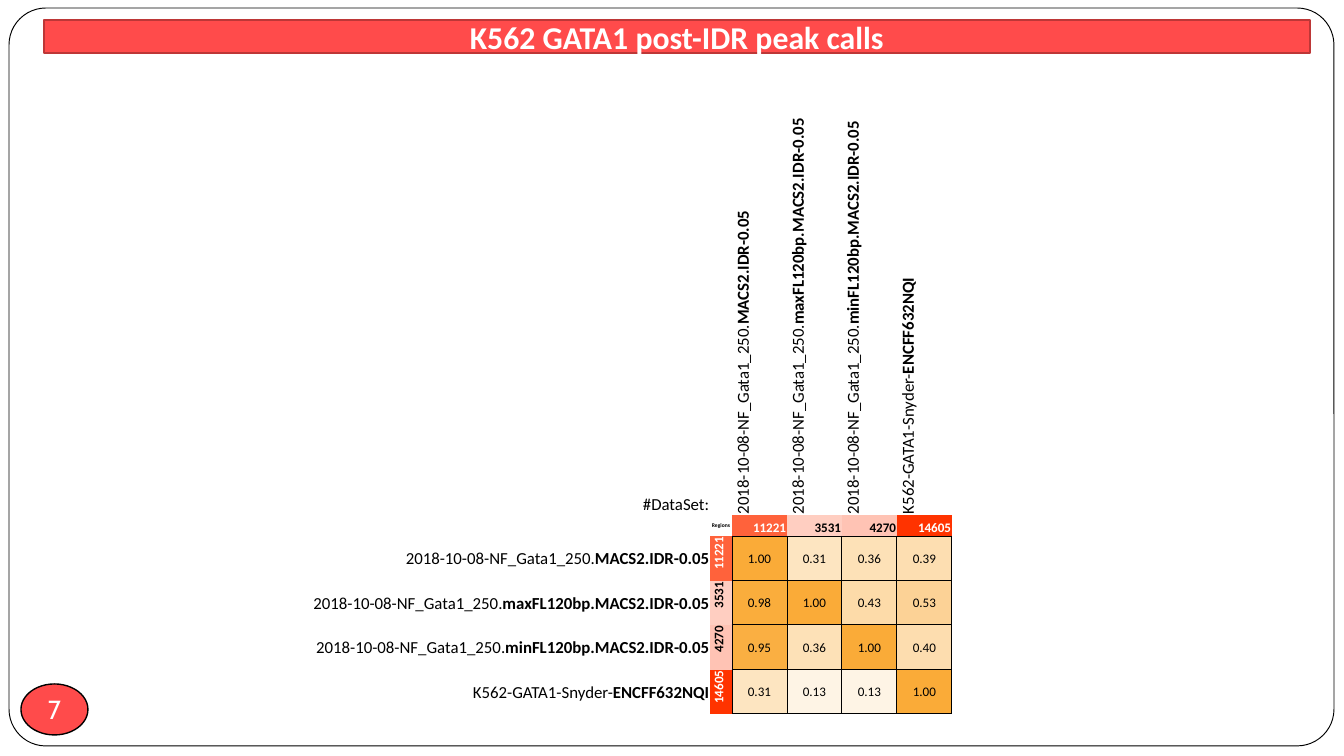
import dataclasses

import lxml.etree
import pptx
import pptx.dml.color
import pptx.enum.shapes
import pptx.enum.text
import pptx.oxml.ns
import pptx.util

SHAPE = pptx.enum.shapes.MSO_SHAPE
ALIGN = pptx.enum.text.PP_ALIGN
ANCHOR = pptx.enum.text.MSO_ANCHOR
qn = pptx.oxml.ns.qn

EMU_PER_PX = 9144000 / 1344
NO_GRID_STYLE = "{2D5ABB26-0587-4C30-8999-92F81FD0307C}"


@dataclasses.dataclass(frozen=True)
class Theme:
    font: str = "Calibri"
    number_font: str = "Cabin"
    black: str = "000000"
    white: str = "FFFFFF"
    red: str = "FF4B4B"
    dark_red: str = "BD3737"
    overlap: str = "FAAB38"
    region: str = "FF3300"
    title_size: int = 17
    number_size: int = 14
    label_size: int = 9
    value_size: int = 7
    caption_size: int = 3


THEME = Theme()


def px(length):
    return pptx.util.Emu(round(length * EMU_PER_PX))


def rgb(color):
    return pptx.dml.color.RGBColor.from_string(color)


def tint(color, share):
    channels = (int(color[i:i + 2], 16) for i in (0, 2, 4))
    return "".join(f"{round(255 - (255 - channel) * share):02X}" for channel in channels)


def write(frame, text, bold_text="", size=THEME.value_size, color=THEME.black,
          font=THEME.font, bold=False, align=ALIGN.CENTER):
    paragraph = frame.paragraphs[0]
    paragraph.alignment = align
    for part, heavy in ((text, bold), (bold_text, True)):
        if part:
            run = paragraph.add_run()
            run.text = part
            run.font.name = font
            run.font.size = pptx.util.Pt(size)
            run.font.bold = heavy
            run.font.color.rgb = rgb(color)


class SlideBuilder:
    """Draws themed elements on the current slide."""

    def __init__(self, presentation, theme):
        self.theme = theme
        self.slide = presentation.slides.add_slide(presentation.slide_layouts[5])

    def paint(self, shape, fill, line, width):
        shape.fill.solid()
        shape.fill.fore_color.rgb = rgb(fill)
        shape.line.color.rgb = rgb(line)
        shape.line.width = pptx.util.Pt(width)

    def panel(self, kind, box, fill, width):
        shape = self.slide.shapes.add_shape(kind, *map(px, box))
        shape.shadow.inherit = False
        self.paint(shape, fill, self.theme.black, width)
        return shape

    def title(self, text, box):
        title = self.slide.shapes.title
        title.left, title.top, title.width, title.height = map(px, box)
        outline = lxml.etree.SubElement(title._element.spPr, qn("a:prstGeom"), prst="roundRect")
        lxml.etree.SubElement(outline, qn("a:avLst"))
        self.paint(title, self.theme.red, self.theme.dark_red, 1)
        frame = title.text_frame
        frame.auto_size = pptx.enum.text.MSO_AUTO_SIZE.NONE
        frame.vertical_anchor = ANCHOR.MIDDLE
        write(frame, text, size=self.theme.title_size, color=self.theme.white, bold=True)
        self.slide.shapes._spTree.append(title._element)

    def page_number(self, text, box):
        badge = self.panel(SHAPE.OVAL, box, self.theme.red, 0.75)
        frame = badge.text_frame
        frame.margin_left = frame.margin_right = frame.margin_top = frame.margin_bottom = 0
        frame.word_wrap = False
        frame.vertical_anchor = ANCHOR.MIDDLE
        write(frame, text, size=self.theme.number_size, color=self.theme.white,
              font=self.theme.number_font)

    def table(self, left, top, widths, heights):
        frame = self.slide.shapes.add_table(len(heights), len(widths), px(left), px(top),
                                            px(sum(widths)), px(sum(heights)))
        table = frame.table
        table.first_row = table.horz_banding = False
        table._tbl.tblPr.find(qn("a:tableStyleId")).text = NO_GRID_STYLE
        for column, width in zip(table.columns, widths):
            column.width = px(width)
        for row, height in zip(table.rows, heights):
            row.height = px(height)
        return table

    def cell(self, cell, text="", fill=None, anchor=ANCHOR.MIDDLE, upright=False,
             border=False, **text_format):
        cell.margin_left = cell.margin_right = cell.margin_top = px(1)
        cell.margin_bottom = 0
        cell.vertical_anchor = anchor
        properties = cell._tc.get_or_add_tcPr()
        if upright:
            properties.set("vert", "vert270")
        if border:
            for side in ("lnL", "lnR", "lnT", "lnB"):
                line = lxml.etree.SubElement(properties, qn(f"a:{side}"), w="6350")
                solid = lxml.etree.SubElement(line, qn("a:solidFill"))
                lxml.etree.SubElement(solid, qn("a:srgbClr"), val=self.theme.black)
        if fill:
            cell.fill.solid()
            cell.fill.fore_color.rgb = rgb(fill)
        else:
            cell.fill.background()
        if text:
            write(cell.text_frame, text, **text_format)
        else:
            end = cell.text_frame.paragraphs[0]._p.get_or_add_endParaRPr()
            end.set("sz", str(self.theme.caption_size * 100))

    def overlap_matrix(self, left, top, datasets, overlaps):
        theme = self.theme
        widths = [498, 22] + [55] * len(datasets)
        heights = [422, 21] + [45, 44] * (len(datasets) // 2)
        table = self.table(left, top, widths, heights)
        self.cell(table.cell(0, 0), "#DataSet:", anchor=ANCHOR.BOTTOM,
                  size=theme.label_size, align=ALIGN.RIGHT)
        self.cell(table.cell(0, 1))
        self.cell(table.cell(1, 0))
        self.cell(table.cell(1, 1), "Regions", size=theme.caption_size, bold=True)
        most = max(count for _, _, count in datasets)
        for i, (sample, method, count) in enumerate(datasets, start=2):
            label = dict(text=sample, bold_text=method, size=theme.label_size)
            self.cell(table.cell(0, i), anchor=ANCHOR.BOTTOM, upright=True,
                      align=ALIGN.LEFT, **label)
            self.cell(table.cell(i, 0), align=ALIGN.RIGHT, **label)
            share = count / most
            for place, upright in (((1, i), False), ((i, 1), True)):
                self.cell(table.cell(*place), str(count), fill=tint(theme.region, share),
                          anchor=ANCHOR.BOTTOM, upright=upright, bold=True, align=ALIGN.RIGHT,
                          color=theme.white if share > 0.5 else theme.black)
            for j, overlap in enumerate(overlaps[i - 2], start=2):
                self.cell(table.cell(i, j), f"{overlap:.2f}",
                          fill=tint(theme.overlap, overlap), border=True)


def main():
    presentation = pptx.Presentation()
    presentation.slide_width, presentation.slide_height = px(1344), px(756)
    builder = SlideBuilder(presentation, THEME)
    frame = builder.panel(SHAPE.ROUNDED_RECTANGLE, (9, 8, 1325, 738), THEME.white, 0.5)
    frame.adjustments[0] = 0.05
    builder.page_number("7", (21, 684, 67, 51))
    builder.title("K562 GATA1 post-IDR peak calls", (44, 20, 1266, 33))
    datasets = [
        ("2018-10-08-NF_Gata1_250.", "MACS2.IDR-0.05", 11221),
        ("2018-10-08-NF_Gata1_250.", "maxFL120bp.MACS2.IDR-0.05", 3531),
        ("2018-10-08-NF_Gata1_250.", "minFL120bp.MACS2.IDR-0.05", 4270),
        ("K562-GATA1-Snyder-", "ENCFF632NQI", 14605),
    ]
    overlaps = [
        (1.00, 0.31, 0.36, 0.39),
        (0.98, 1.00, 0.43, 0.53),
        (0.95, 0.36, 1.00, 0.40),
        (0.31, 0.13, 0.13, 1.00),
    ]
    builder.overlap_matrix(212, 93, datasets, overlaps)
    presentation.save("out.pptx")


if __name__ == "__main__":
    main()
